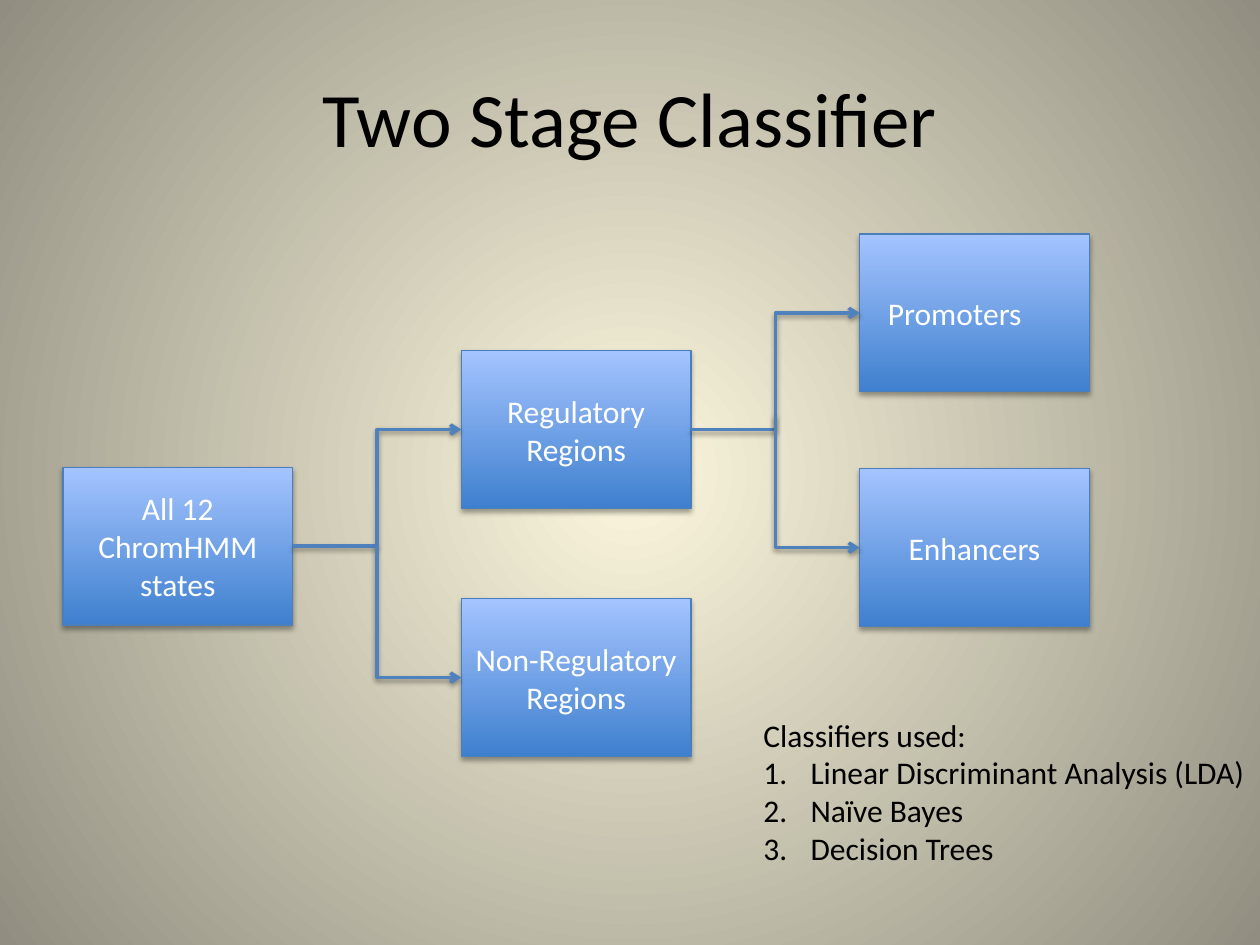
import lxml.etree
import pptx
import pptx.dml.color
import pptx.enum.dml
import pptx.enum.shapes
import pptx.enum.text
import pptx.oxml.ns
import pptx.util

Cm = pptx.util.Cm
Pt = pptx.util.Pt
RGBColor = pptx.dml.color.RGBColor
Align = pptx.enum.text.PP_ALIGN
Anchor = pptx.enum.text.MSO_ANCHOR
qn = pptx.oxml.ns.qn

BLACK = RGBColor(0x00, 0x00, 0x00)
WHITE = RGBColor(0xFF, 0xFF, 0xFF)
CREAM = RGBColor(0xFC, 0xF7, 0xDD)
STONE = RGBColor(0x91, 0x8E, 0x81)
DEEP_BLUE = RGBColor(0x3F, 0x80, 0xCE)
PALE_BLUE = RGBColor(0xA4, 0xC4, 0xFF)
EDGE_BLUE = RGBColor(0x4B, 0x7E, 0xBC)
ARROW_BLUE = RGBColor(0x4F, 0x81, 0xBD)

BOX_WIDTH, BOX_HEIGHT = 4.63, 3.18
COLUMN_STEP = 8.03
BRANCH_DROP = 2.67


def add_child(parent, tag, **attributes):
    values = {name: str(value) for name, value in attributes.items()}
    return lxml.etree.SubElement(parent, qn(tag), values)


def write_text(para, text, size=18, color=BLACK, align=Align.LEFT):
    para.alignment = align
    span = para.add_run()
    span.text = text
    span.font.name = "Calibri"
    span.font.size = Pt(size)
    span.font.color.rgb = color


def set_gradient(fill, *colors):
    fill.gradient()
    for stop, color in zip(fill.gradient_stops, colors):
        stop.color.rgb = color


def add_shadow(properties, opacity, distance):
    effects = properties.find(qn("a:effectLst"))
    if effects is None:
        effects = add_child(properties, "a:effectLst")
    shadow = add_child(effects, "a:outerShdw", blurRad=Pt(3.1), dist=Pt(distance),
                       dir=5400000, rotWithShape=0)
    color = add_child(shadow, "a:srgbClr", val=BLACK)
    add_child(color, "a:alpha", val=opacity * 1000)


def paint_background(page):
    set_gradient(page.background.fill, CREAM, STONE)
    gradient = next(page.element.iter(qn("a:gradFill")))
    gradient.remove(gradient.find(qn("a:lin")))
    circle = add_child(gradient, "a:path", path="circle")
    add_child(circle, "a:fillToRect", l=50000, t=50000, r=50000, b=50000)


def add_title(page, left, top, width, height):
    box = page.shapes.add_textbox(Cm(left), Cm(top), Cm(width), Cm(height))
    frame = box.text_frame
    frame.word_wrap = True
    frame.vertical_anchor = Anchor.MIDDLE
    write_text(frame.paragraphs[0], "Two Stage Classifier", size=44, align=Align.CENTER)


def add_stage(page, left, top, text, align=Align.CENTER):
    box = page.shapes.add_shape(pptx.enum.shapes.MSO_SHAPE.RECTANGLE,
                                Cm(left), Cm(top), Cm(BOX_WIDTH), Cm(BOX_HEIGHT))
    set_gradient(box.fill, DEEP_BLUE, PALE_BLUE)
    box.fill.gradient_angle = 90
    box.line.color.rgb = EDGE_BLUE
    box.line.width = Pt(0.75)
    box.shadow.inherit = False
    add_shadow(box.element.spPr, opacity=35, distance=1.8)
    frame = box.text_frame
    frame.word_wrap = True
    frame.vertical_anchor = Anchor.MIDDLE
    write_text(frame.paragraphs[0], text, color=WHITE, align=align)
    return box


def add_arrow(page, start_x, start_y, end_x, end_y):
    arrow = page.shapes.add_connector(pptx.enum.shapes.MSO_CONNECTOR.ELBOW,
                                      start_x, start_y, end_x, end_y)
    arrow.line.color.rgb = ARROW_BLUE
    arrow.line.width = Pt(2)
    add_child(arrow.line._get_or_add_ln(), "a:tailEnd", type="arrow")
    add_shadow(arrow.element.spPr, opacity=38, distance=1.6)
    return arrow


def join_branches(page, parent, upper, lower):
    parent_right = parent.left + parent.width
    upper_arrow = add_arrow(page, parent_right, parent.top + parent.height // 2,
                            upper.left, upper.top + upper.height // 2)
    upper_arrow.begin_connect(parent, 3)
    upper_arrow.end_connect(upper, 1)

    drop = Cm(BRANCH_DROP)
    run = (lower.left - parent_right) // 2
    center_x = lower.left - run // 2
    center_y = lower.top + lower.height // 2 - drop // 2
    lower_arrow = add_arrow(page, center_x + drop // 2, center_y - run // 2,
                            center_x - drop // 2, center_y + run // 2)
    properties = lower_arrow.element.spPr
    properties.find(qn("a:xfrm")).set("rot", "16200000")
    properties.find(qn("a:prstGeom")).set("prst", "bentConnector2")


def add_flow(page, left, top):
    middle = left + COLUMN_STEP
    right = middle + COLUMN_STEP
    states = add_stage(page, left, top + 4.7, "All 12 ChromHMM states")
    regulatory = add_stage(page, middle, top + 2.35, "Regulatory Regions")
    other = add_stage(page, middle, top + 7.35, "Non-Regulatory Regions")
    promoters = add_stage(page, right, top, "Promoters\t", align=Align.RIGHT)
    enhancers = add_stage(page, right, top + 4.73, "Enhancers")
    join_branches(page, states, regulatory, other)
    join_branches(page, regulatory, promoters, enhancers)


def add_classifiers(page, left, top, width, height):
    box = page.shapes.add_textbox(Cm(left), Cm(top), Cm(width), Cm(height))
    frame = box.text_frame
    frame.word_wrap = False
    frame.auto_size = pptx.enum.text.MSO_AUTO_SIZE.SHAPE_TO_FIT_TEXT
    write_text(frame.paragraphs[0], "Classifiers used:")
    for name in ("Linear Discriminant Analysis (LDA)", "Naïve Bayes", "Decision Trees"):
        para = frame.add_paragraph()
        write_text(para, name)
        properties = para._p.get_or_add_pPr()
        properties.set("marL", str(Cm(0.95)))
        properties.set("indent", str(-Cm(0.95)))
        add_child(properties, "a:buFont", typeface="+mj-lt")
        add_child(properties, "a:buAutoNum", type="arabicPeriod")


def main():
    deck = pptx.Presentation()
    deck.slide_width = Cm(25.4)
    deck.slide_height = Cm(19.05)
    page = deck.slides.add_slide(deck.slide_layouts[6])
    paint_background(page)
    add_title(page, 1.27, 0.76, 22.86, 3.18)
    add_flow(page, 1.27, 4.72)
    add_classifiers(page, 15.14, 14.3, 10.26, 4.11)
    deck.save("out.pptx")


if __name__ == "__main__":
    main()
